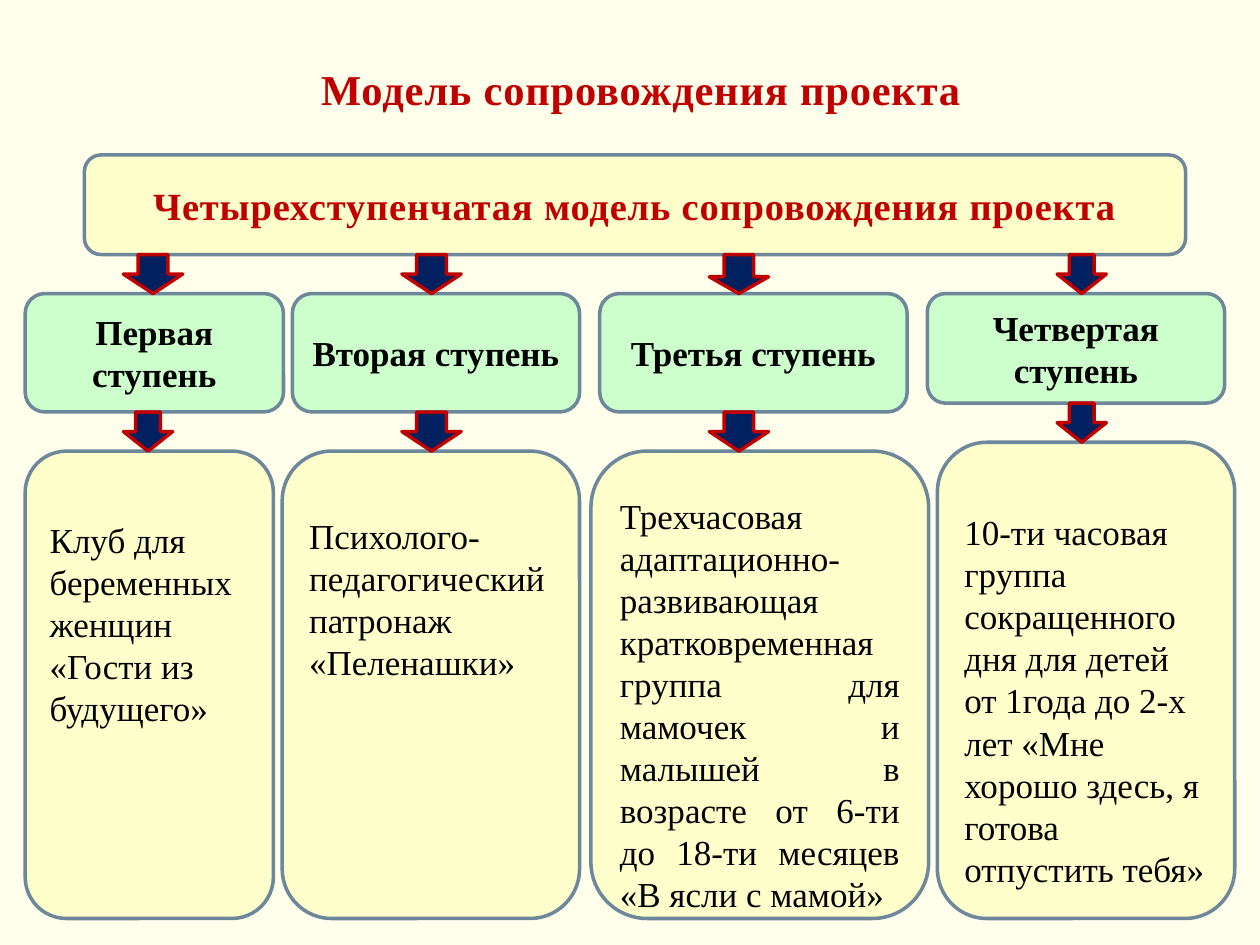
from dataclasses import dataclass

from pptx import Presentation
from pptx.dml.color import RGBColor
from pptx.enum import shapes, text
from pptx.util import Inches, Pt

IVORY = RGBColor(0xFF, 0xFF, 0xEB)
CREAM = RGBColor(0xFF, 0xFF, 0xCC)
MINT = RGBColor(0xCC, 0xFF, 0xCC)
SLATE = RGBColor(0x6D, 0x87, 0x9B)
RED = RGBColor(0xC0, 0x00, 0x00)
NAVY = RGBColor(0x00, 0x20, 0x60)
BLACK = RGBColor(0x00, 0x00, 0x00)

FONT = "Times New Roman"
CENTER, LEFT, JUSTIFY = text.PP_ALIGN.CENTER, text.PP_ALIGN.LEFT, text.PP_ALIGN.JUSTIFY
HEAD_TOP, ARROW_HEIGHT, BODY_BOTTOM = 2.33, 0.31, 7.29


@dataclass
class Stage:
    heading: str
    body: str
    head_left: float
    head_width: float
    head_height: float
    body_left: float
    body_width: float
    text_inset: float
    arrow_left: float
    arrow_widths: tuple[float, float] = (0.47, 0.47)
    align: text.PP_ALIGN = LEFT
    upper_tip: float = 0.5


STAGES = [
    Stage("Первая ступень", "Клуб для беременных женщин «Гости из будущего»",
          0.2, 2.05, 0.94, 0.2, 1.97, 0.44, 0.98, (0.47, 0.39)),
    Stage("Вторая ступень", "Психолого-педагогический патронаж «Пеленашки»",
          2.32, 2.28, 0.94, 2.24, 2.36, 0.39, 3.19, align=JUSTIFY),
    Stage("Третья ступень",
          "Трехчасовая адаптационно-развивающая кратковременная группа для мамочек "
          "и малышей в возрасте от 6-ти до 18-ти месяцев «В ясли с мамой»",
          4.76, 2.44, 0.94, 4.69, 2.68, 0.21, 5.63, align=JUSTIFY, upper_tip=0.43),
    Stage("Четвертая ступень",
          "10-ти часовая группа сокращенного дня для детей от 1года до 2-х лет "
          "«Мне хорошо здесь, я готова отпустить тебя»",
          7.36, 2.36, 0.87, 7.44, 2.36, 0.43, 8.39, (0.39, 0.39)),
]


def add_figure(page, kind, left: float, top: float, width: float, height: float,
               fill: RGBColor, line: RGBColor):
    """Add a filled and outlined preset shape without a shadow."""
    figure = page.shapes.add_shape(kind, Inches(left), Inches(top), Inches(width), Inches(height))
    figure.shadow.inherit = False
    figure.fill.solid()
    figure.fill.fore_color.rgb = fill
    figure.line.color.rgb = line
    figure.line.width = Pt(2)
    return figure


def add_panel(page, left: float, top: float, width: float, height: float, fill: RGBColor):
    """Add a rounded panel."""
    return add_figure(page, shapes.MSO_SHAPE.ROUNDED_RECTANGLE,
                      left, top, width, height, fill, SLATE)


def add_arrow(page, left: float, top: float, width: float, tip: float = 0.5) -> None:
    """Add a down arrow between two levels."""
    arrow = add_figure(page, shapes.MSO_SHAPE.DOWN_ARROW,
                       left, top, width, ARROW_HEIGHT, NAVY, RED)
    arrow.adjustments[1] = tip


def write(box, words: str, size: float, color: RGBColor = BLACK, bold: bool = False,
          align: text.PP_ALIGN = CENTER, top_inset: float = 0.05,
          anchor: text.MSO_ANCHOR = text.MSO_ANCHOR.MIDDLE, spacing: int = 0) -> None:
    """Write one paragraph, with letter spacing in hundredths of a point."""
    frame = box.text_frame
    frame.word_wrap = True
    frame.vertical_anchor = anchor
    frame.margin_top = Inches(top_inset)
    para = frame.paragraphs[0]
    para.alignment = align
    span = para.add_run()
    span.text = words
    font = para.font
    font.name, font.size, font.bold = FONT, Pt(size), bold
    font.color.rgb = color
    if spacing:
        span._r.get_or_add_rPr().set("spc", str(spacing))


def add_stage(page, stage: Stage) -> None:
    """Draw one stage: heading, description and the arrows above each."""
    head_bottom = HEAD_TOP + stage.head_height
    body_top = head_bottom + ARROW_HEIGHT
    upper_width, lower_width = stage.arrow_widths
    head = add_panel(page, stage.head_left, HEAD_TOP, stage.head_width, stage.head_height, MINT)
    write(head, stage.heading, 20, bold=True)
    body = add_panel(page, stage.body_left, body_top, stage.body_width,
                     BODY_BOTTOM - body_top, CREAM)
    write(body, stage.body, 20, align=stage.align, top_inset=stage.text_inset,
          anchor=text.MSO_ANCHOR.TOP)
    add_arrow(page, stage.arrow_left, HEAD_TOP - ARROW_HEIGHT, upper_width, stage.upper_tip)
    add_arrow(page, stage.arrow_left, head_bottom, lower_width)


def main() -> None:
    """Build the slide and save it."""
    deck = Presentation()
    deck.slide_width, deck.slide_height = Inches(10), Inches(7.5)
    page = deck.slides.add_slide(deck.slide_layouts[6])
    page.background.fill.solid()
    page.background.fill.fore_color.rgb = IVORY

    title = page.shapes.add_textbox(Inches(0.59), Inches(0.29), Inches(9), Inches(0.71))
    write(title, "Модель сопровождения проекта", 24.3, RED, True, top_inset=0.16, spacing=50)
    banner = add_panel(page, 0.67, 1.23, 8.74, 0.79, CREAM)
    write(banner, "Четырехступенчатая модель сопровождения проекта", 22, RED, True, spacing=50)
    for stage in STAGES:
        add_stage(page, stage)
    deck.save("out.pptx")


if __name__ == "__main__":
    main()
